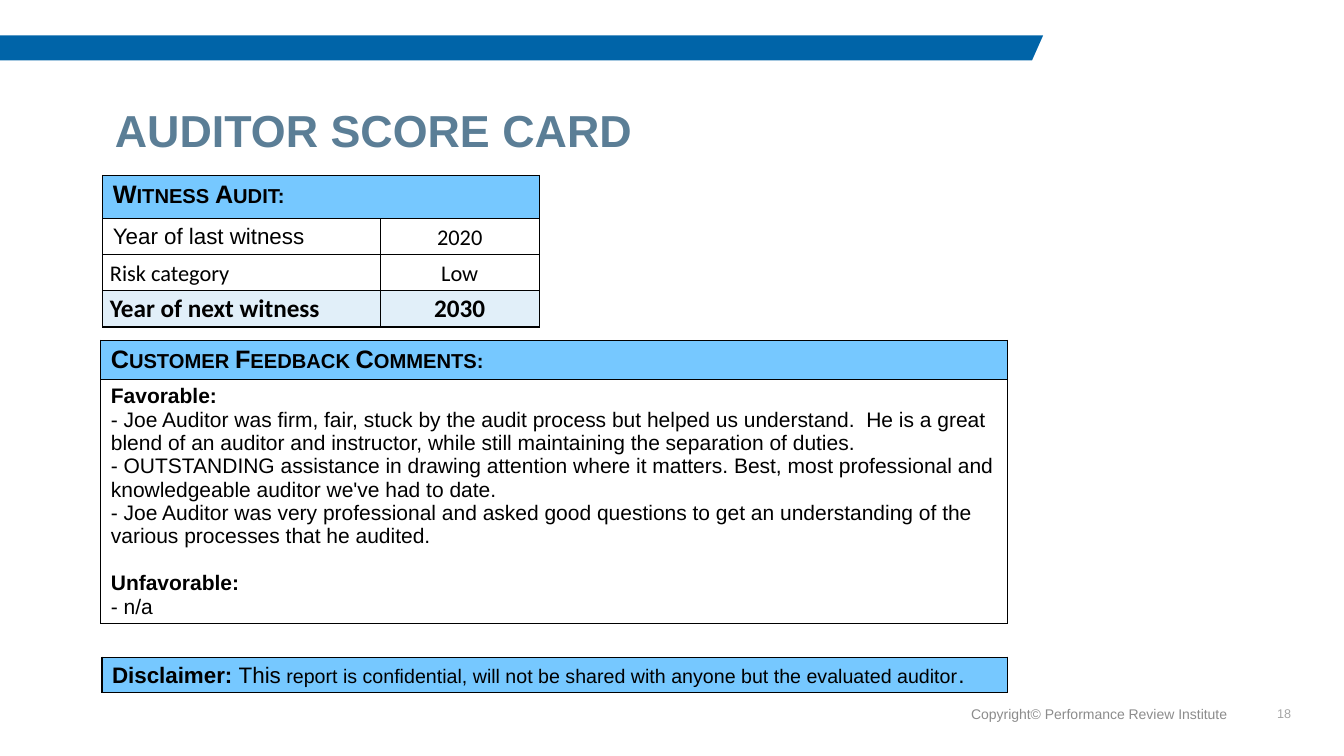
import pptx
import pptx.util
import pptx.dml.color
import pptx.enum.text
import pptx.oxml
import pptx.oxml.ns

Cm, Pt = pptx.util.Cm, pptx.util.Pt
ALIGN = pptx.enum.text.PP_ALIGN
ANCHOR = pptx.enum.text.MSO_ANCHOR

COLORS = {"band": "0064A8", "title": "5B7E96", "footer": "8C8C8C", "number": "A5A5A5",
          "text": "000000", "header": "76C8FF", "highlight": "E1EFF9"}

# Content: a run is (text, size, bold, font, small caps), a paragraph is a list of runs
TITLE = "AUDITOR SCORE CARD"
BAND_POINTS = [(0, 0.89), (26.29, 0.89), (26.01, 1.52), (0, 1.52)]
FOOTERS = [
    # text, left, width, size, color
    ("Copyright© Performance Review Institute", 24.13, 7.04, 10, "footer"),
    ("18", 31.37, 1.42, 9, "number"),
]


def plain(text, size=15, bold=False, font="Arial"):
    return [(text, size, bold, font, False)]


def header(text):
    return {"paragraphs": [[(text, 18, True, "Arial", True)]], "fill": "header"}


def calibri(text, size=16, bold=False, **options):
    return {"paragraphs": [plain(text, size, bold, "Calibri")],
            "tight": True, "spacing": 1.07, **options}


CENTERED = {"align": ALIGN.CENTER}
MIDDLE = {"anchor": ANCHOR.MIDDLE}
NEXT = {"size": 18, "bold": True, "fill": "highlight"}

WITNESS_ROWS = [
    [header("Witness Audit:")],
    [{"paragraphs": [plain("Year of last witness", 16)], **MIDDLE},
     calibri("2020", **CENTERED, **MIDDLE)],
    [calibri("Risk category", **MIDDLE), calibri("Low", **CENTERED, **MIDDLE)],
    [calibri("Year of next witness", **NEXT), calibri("2030", **NEXT, **CENTERED)],
]
COMMENTS = [
    plain("Favorable:", bold=True),
    plain("- Joe Auditor was firm, fair, stuck by the audit process but helped us understand.  "
          "He is a great blend of an auditor and instructor, while still maintaining the "
          "separation of duties."),
    plain("- OUTSTANDING assistance in drawing attention where it matters. Best, most "
          "professional and knowledgeable auditor we've had to date."),
    plain("- Joe Auditor was very professional and asked good questions to get an "
          "understanding of the various processes that he audited."),
    plain("Unfavorable:", bold=True),
    plain("- n/a"),
]
FEEDBACK_ROWS = [
    [header("Customer Feedback Comments:")],
    [{"paragraphs": COMMENTS, "gaps": {4: 17}}],
]
DISCLAIMER = (plain("Disclaimer: ", 16, True) + plain("This", 16)
              + plain(" report is confidential, will not be shared with anyone but the "
                      "evaluated auditor", 14) + plain(".", 16))
DISCLAIMER_ROWS = [[{"paragraphs": [DISCLAIMER], "fill": "header", "anchor": ANCHOR.BOTTOM}]]

TABLES = [
    # left, top, column widths, row heights, rows
    (2.59, 4.42, [6.99, 4.01], [1.09, 0.91, 0.91, 0.91], WITNESS_ROWS),
    (2.54, 8.58, [22.86], [0.99, 6.12], FEEDBACK_ROWS),
    (2.57, 16.56, [22.83], [0.9], DISCLAIMER_ROWS),
]


def rgb(name):
    return pptx.dml.color.RGBColor.from_string(COLORS[name])


def add_run(paragraph, text, size, bold, font, small_caps=False, color="text"):
    run = paragraph.add_run()
    run.text = text
    run.font.size, run.font.bold, run.font.name = Pt(size), bold, font
    run.font.color.rgb = rgb(color)
    if small_caps:
        run._r.get_or_add_rPr().set("cap", "small")


def add_borders(cell):
    properties = cell._tc.get_or_add_tcPr()
    for side in ("lnL", "lnR", "lnT", "lnB"):
        properties.append(pptx.oxml.parse_xml(
            f'<a:{side} {pptx.oxml.ns.nsdecls("a")} w="{Pt(1)}"><a:solidFill>'
            f'<a:srgbClr val="{COLORS["text"]}"/></a:solidFill></a:{side}>'))


def fill_cell(cell, content):
    cell.vertical_anchor = content.get("anchor", ANCHOR.TOP)
    if content.get("tight"):
        cell.margin_left = cell.margin_right = Cm(0.18)
        cell.margin_top = cell.margin_bottom = 0
    if "fill" in content:
        cell.fill.solid()
        cell.fill.fore_color.rgb = rgb(content["fill"])
    else:
        cell.fill.background()
    frame = cell.text_frame
    for index, runs in enumerate(content["paragraphs"]):
        paragraph = frame.add_paragraph() if index else frame.paragraphs[0]
        paragraph.alignment = content.get("align", ALIGN.LEFT)
        paragraph.line_spacing = content.get("spacing", 1.0)
        if index in content.get("gaps", {}):
            paragraph.space_before = Pt(content["gaps"][index])
        for run in runs:
            add_run(paragraph, *run)


def add_score_table(slide, left, top, widths, heights, rows):
    table = slide.shapes.add_table(len(heights), len(widths), Cm(left), Cm(top),
                                   Cm(sum(widths)), Cm(sum(heights))).table
    table.first_row = table.horz_banding = False
    for column, width in zip(table.columns, widths):
        column.width = Cm(width)
    for row, height in zip(table.rows, heights):
        row.height = Cm(height)
    for cell in table.iter_cells():
        add_borders(cell)
    for row_index, contents in enumerate(rows):
        if len(contents) < len(widths):
            table.cell(row_index, 0).merge(table.cell(row_index, len(widths) - 1))
        for column_index, content in enumerate(contents):
            fill_cell(table.cell(row_index, column_index), content)


def main():
    presentation = pptx.Presentation()
    presentation.slide_width, presentation.slide_height = Cm(33.87), Cm(19.05)
    slide = presentation.slides.add_slide(presentation.slide_layouts[5])

    # Top band
    points = [(Cm(x), Cm(y)) for x, y in BAND_POINTS]
    builder = slide.shapes.build_freeform(*points[0])
    builder.add_line_segments(points[1:], close=True)
    band = builder.convert_to_shape()
    band.shadow.inherit = False
    band.fill.solid()
    band.fill.fore_color.rgb = rgb("band")
    band.line.fill.background()

    # Title
    title = slide.shapes.title
    title.left, title.top, title.width, title.height = Cm(2.64), Cm(2.64), Cm(28.68), Cm(1.4)
    title.text_frame.vertical_anchor = ANCHOR.MIDDLE
    title.text_frame.auto_size = pptx.enum.text.MSO_AUTO_SIZE.NONE
    paragraph = title.text_frame.paragraphs[0]
    paragraph.alignment, paragraph.line_spacing = ALIGN.LEFT, 0.9
    add_run(paragraph, TITLE, 32, True, "Arial", color="title")

    # Tables
    for table in TABLES:
        add_score_table(slide, *table)

    # Footer and slide number
    for text, left, width, size, color in FOOTERS:
        frame = slide.shapes.add_textbox(Cm(left), Cm(17.73), Cm(width), Cm(0.51)).text_frame
        frame.word_wrap = True
        frame.vertical_anchor = ANCHOR.MIDDLE
        frame.paragraphs[0].alignment = ALIGN.RIGHT
        add_run(frame.paragraphs[0], text, size, False, "Arial", color=color)

    presentation.save("out.pptx")


if __name__ == "__main__":
    main()
